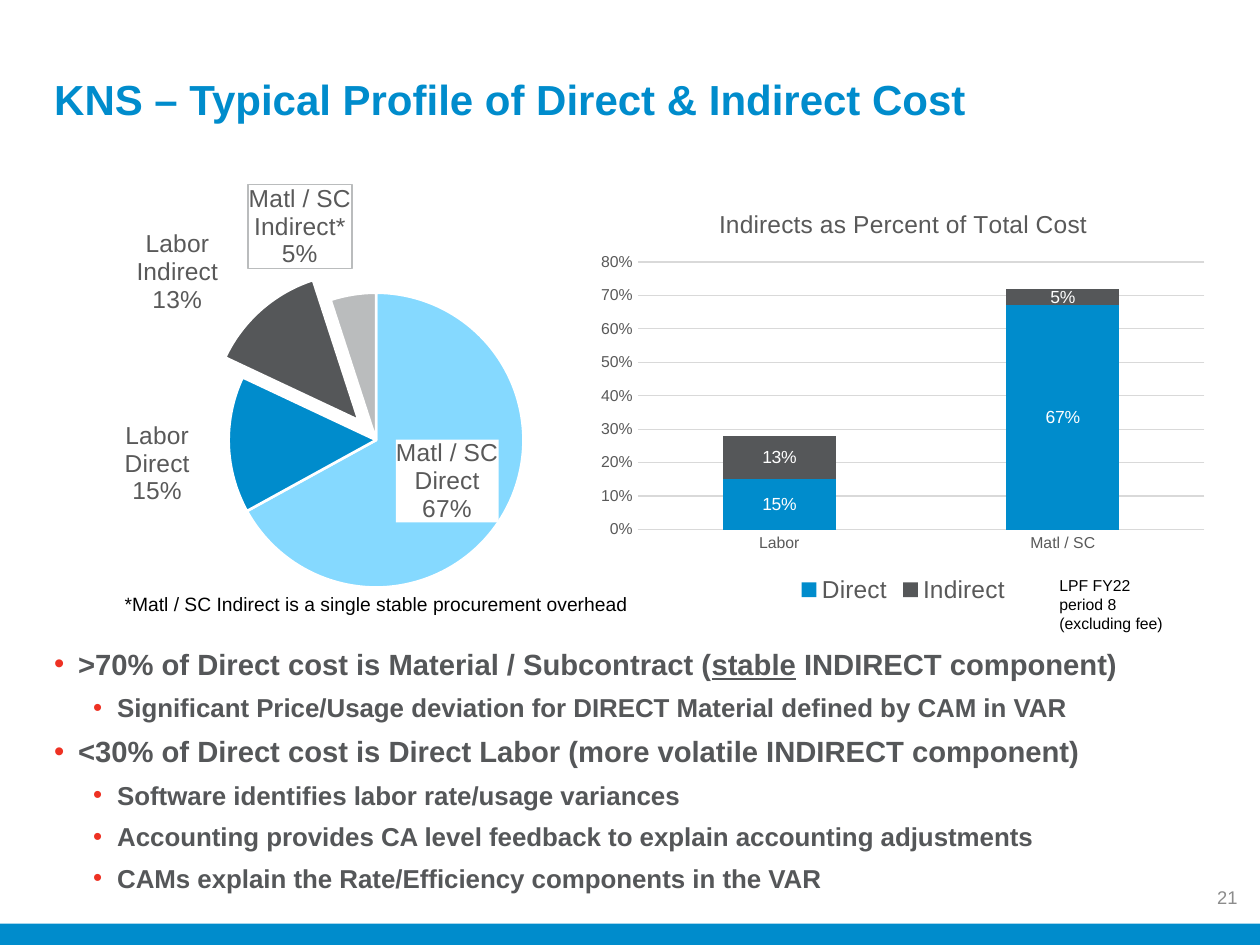
from copy import deepcopy

from lxml import etree
from pptx import Presentation
from pptx.chart.data import CategoryChartData as ChartData
from pptx.dml.color import RGBColor as Color
from pptx.enum.chart import XL_CHART_TYPE as ChartType
from pptx.enum.chart import XL_LABEL_POSITION as LabelPosition
from pptx.enum.chart import XL_LEGEND_POSITION as LegendPosition
from pptx.enum.chart import XL_TICK_MARK as TickMark
from pptx.enum.shapes import MSO_SHAPE as Shape
from pptx.enum.text import MSO_ANCHOR as Anchor
from pptx.enum.text import MSO_AUTO_SIZE as AutoSize
from pptx.enum.text import PP_ALIGN as Align
from pptx.oxml import parse_xml
from pptx.oxml.ns import nsdecls, qn
from pptx.util import Inches, Pt

COLORS = {
    "blue": "008CCC", "sky": "85D9FF", "gray": "555759", "silver": "BABCBD",
    "label": "595959", "grid": "D9D9D9", "number": "8C8C8C",
    "bullet": "EE3123", "black": "000000", "white": "FFFFFF",
}
# Per bullet level: text size, left indent
LEVELS = [(16.7, 0.19), (14.8, 0.5)]
HANGING = 0.19


def color(name):
    return Color.from_string(COLORS[name])


class SlideBuilder:
    """Holds the font and the current page."""

    font = "Arial"

    def __init__(self, page):
        self.page = page

    def format(self, font, size, shade, **extra):
        values = {"name": self.font, "size": Pt(size), **extra}
        for key, value in values.items():
            setattr(font, key, value)
        font.color.rgb = color(shade)

    def place(self, box, left, top, width, height):
        values = {"left": left, "top": top, "width": width, "height": height}
        for key, value in values.items():
            setattr(box, key, Inches(value))

    def title(self, text, *area):
        box = self.page.shapes.title
        self.place(box, *area)
        frame = box.text_frame
        frame.text = text
        values = {"vertical_anchor": Anchor.BOTTOM, "margin_bottom": 0,
                  "auto_size": AutoSize.NONE}
        for key, value in values.items():
            setattr(frame, key, value)
        para = frame.paragraphs[0]
        para.alignment = Align.LEFT
        self.format(para.runs[0].font, 24, "blue", bold=True)

    def bullets(self, items, *area):
        box = self.page.placeholders[1]
        self.place(box, *area)
        frame = box.text_frame
        frame.auto_size = AutoSize.NONE
        for index, (level, spans) in enumerate(items):
            para = frame.add_paragraph() if index else frame.paragraphs[0]
            size, indent = LEVELS[level]
            para.level = level
            para.space_before = Pt(6 if index else 0)
            props = para._p.get_or_add_pPr()
            props.set("marL", str(Inches(indent)))
            props.set("indent", str(-Inches(HANGING)))
            shade = etree.SubElement(props, qn("a:buClr"))
            etree.SubElement(shade, qn("a:srgbClr"), val=COLORS["bullet"])
            etree.SubElement(props, qn("a:buFont"), typeface=self.font)
            etree.SubElement(props, qn("a:buChar"), char="•")
            for text, underline in spans:
                span = para.add_run()
                span.text = text
                self.format(span.font, size, "gray", bold=True, underline=underline)

    def text(self, lines, area, size, shade="black", wrap=True,
             align=Align.LEFT, anchor=Anchor.TOP):
        box = self.page.shapes.add_textbox(*map(Inches, area))
        frame = box.text_frame
        frame.word_wrap = wrap
        frame.vertical_anchor = anchor
        for index, line in enumerate(lines):
            para = frame.add_paragraph() if index else frame.paragraphs[0]
            para.alignment = align
            span = para.add_run()
            span.text = line
            self.format(span.font, size, shade)

    def bar(self, *area):
        shape = self.page.shapes.add_shape(Shape.RECTANGLE, *map(Inches, area))
        shape.shadow.inherit = False
        shape.fill.solid()
        shape.fill.fore_color.rgb = color("blue")
        shape.line.fill.background()

    def chart(self, kind, categories, series, area, number_format):
        data = ChartData(number_format=number_format)
        data.categories = categories
        for name, values in series:
            data.add_series(name, values)
        chart = self.page.shapes.add_chart(kind, *map(Inches, area), data).chart
        self.format(chart.font, 10, "black")
        return chart

    def plot_area(self, chart, x, y, w, h):
        area = chart._chartSpace.chart.plotArea
        for old in area.findall(qn("c:layout")):
            area.remove(old)
        sizes = "".join(f'<c:{key} val="{value}"/>'
                        for key, value in zip("xywh", (x, y, w, h)))
        area.insert(0, parse_xml(
            f'<c:layout {nsdecls("c")}><c:manualLayout><c:layoutTarget val="inner"/>'
            f'<c:xMode val="edge"/><c:yMode val="edge"/>{sizes}'
            '</c:manualLayout></c:layout>'))

    def pie(self, slices, area):
        names = [part[0] for part in slices]
        values = [part[1] for part in slices]
        chart = self.chart(ChartType.PIE, names, [("Series 1", values)], area, "#,##0")
        chart.has_title = False
        chart.has_legend = False
        self.plot_area(chart, 0.263, 0.261, 0.468, 0.691)
        series = chart.plots[0].series[0]
        labels = series.data_labels
        self.format(labels.font, 14, "label")
        options = {"number_format": "0%", "number_format_is_linked": False,
                   "show_value": False, "show_category_name": True,
                   "show_percentage": True, "position": LabelPosition.OUTSIDE_END}
        for key, value in options.items():
            setattr(labels, key, value)
        # Labels stand without leader lines
        for old in labels._element.findall(qn("c:showLeaderLines")):
            labels._element.remove(old)
        etree.SubElement(labels._element, qn("c:showLeaderLines"), val="0")
        text_style = labels._element.find(qn("c:txPr"))
        for index, (_, _, shade, explosion, shift, fill, line) in enumerate(slices):
            point = series.points[index].format
            point.fill.solid()
            point.fill.fore_color.rgb = color(shade)
            point.line.color.rgb = color("white")
            point.line.width = Pt(1.5)
            if explosion:
                slice_xml = series._element.findall(qn("c:dPt"))[index]
                slice_xml.find(qn("c:spPr")).addprevious(parse_xml(
                    f'<c:explosion {nsdecls("c")} val="{explosion}"/>'))
            label = self.pie_label(index, shift, fill, line)
            label.find(qn("c:dLblPos")).addprevious(deepcopy(text_style))
            labels._element.insert(index, label)

    def pie_label(self, index, shift, fill, line):
        def paint(name):
            if not name:
                return "<a:noFill/>"
            return f'<a:solidFill><a:srgbClr val="{COLORS[name]}"/></a:solidFill>'

        flags = {"LegendKey": 0, "Val": 0, "CatName": 1, "SerName": 0,
                 "Percent": 1, "BubbleSize": 0}
        shows = "".join(f'<c:show{key} val="{on}"/>' for key, on in flags.items())
        return parse_xml(
            f'<c:dLbl {nsdecls("c", "a")}><c:idx val="{index}"/>'
            f'<c:layout><c:manualLayout><c:x val="{shift[0]}"/><c:y val="{shift[1]}"/>'
            '</c:manualLayout></c:layout><c:numFmt formatCode="0%" sourceLinked="0"/>'
            f'<c:spPr>{paint(fill)}<a:ln w="9525">{paint(line)}</a:ln></c:spPr>'
            f'<c:dLblPos val="outEnd"/>{shows}<c:separator>\n</c:separator></c:dLbl>')

    def columns(self, title, categories, series, shades, area):
        chart = self.chart(ChartType.COLUMN_STACKED, categories, series, area, "0%")
        self.plot_area(chart, 0.078, 0.174, 0.9, 0.638)
        chart.has_title = True
        chart.chart_title.text_frame.text = title
        span = chart.chart_title.text_frame.paragraphs[0].runs[0]
        self.format(span.font, 14, "label", bold=False)
        chart.has_legend = True
        chart.legend.position = LegendPosition.BOTTOM
        chart.legend.include_in_layout = False
        self.format(chart.legend.font, 14, "label")
        plot = chart.plots[0]
        plot.gap_width, plot.overlap, plot.vary_by_categories = 150, 100, False
        for group, shade in zip(plot.series, shades):
            group.format.fill.solid()
            group.format.fill.fore_color.rgb = color(shade)
            group.data_labels.show_value = True
            self.format(group.data_labels.font, 10, "white")
        for axis in (chart.category_axis, chart.value_axis):
            axis.major_tick_mark = axis.minor_tick_mark = TickMark.NONE
            self.format(axis.tick_labels.font, 9, "label")
        values = chart.value_axis
        values.minimum_scale, values.maximum_scale, values.major_unit = 0, 0.8, 0.1
        values.format.line.fill.background()
        for part in (chart.category_axis, values.major_gridlines):
            part.format.line.color.rgb = color("grid")
            part.format.line.width = Pt(0.75)


def main():
    deck = Presentation()
    deck.slide_width, deck.slide_height = Inches(10), Inches(7.5)
    slide = SlideBuilder(deck.slides.add_slide(deck.slide_layouts[1]))

    # Frame of the page
    slide.bar(0, 7.33, 10, 0.17)
    slide.title("KNS – Typical Profile of Direct & Indirect Cost", 0.33, 0.33, 9.33, 0.65)
    slide.text(["21"], (9.42, 6.92, 0.5, 0.4), 10.5, "number",
               align=Align.RIGHT, anchor=Anchor.MIDDLE)

    # Cost shares: name, value, colour, explosion, label shift, label fill and line
    slide.pie([
        ("Matl / SC Direct", 67, "sky", 0, (-0.18, -0.17), "white", None),
        ("Labor Direct", 15, "blue", 0, (-0.05, 0.04), None, None),
        ("Labor Indirect", 13, "gray", 18, (-0.06, 0.02), None, None),
        ("Matl / SC Indirect*", 5, "silver", 0, (0, -0.04), "white", "silver"),
    ], (0.5, 1.25, 5, 3.7))

    # Direct and indirect columns
    slide.columns("Indirects as Percent of Total Cost", ["Labor", "Matl / SC"],
                  [("Direct", (0.15, 0.67)), ("Indirect", (0.13, 0.05))],
                  ["blue", "gray"], (4.67, 1.5, 5, 3.33))

    # Chart notes
    slide.text(["LPF FY22 period 8", "(excluding fee)"], (8.31, 4.52, 1.11, 0.41), 9)
    slide.text(["*Matl / SC Indirect is a single stable procurement overhead"],
               (0.89, 4.65, 4.22, 0.29), 11, wrap=False)

    # Findings: level, spans of text and underline
    slide.bullets([
        (0, [(">70% of Direct cost is Material / Subcontract (", False),
             ("stable", True), (" INDIRECT component)", False)]),
        (1, [("Significant Price/Usage deviation for DIRECT Material defined by CAM in VAR", False)]),
        (0, [("<30% of Direct cost is Direct Labor (more volatile INDIRECT component)", False)]),
        (1, [("Software identifies labor rate/usage variances", False)]),
        (1, [("Accounting provides CA level feedback to explain accounting adjustments", False)]),
        (1, [("CAMs explain the Rate/Efficiency components in the VAR", False)]),
    ], 0.33, 5.08, 9.33, 1.83)

    deck.save("out.pptx")


if __name__ == "__main__":
    main()
